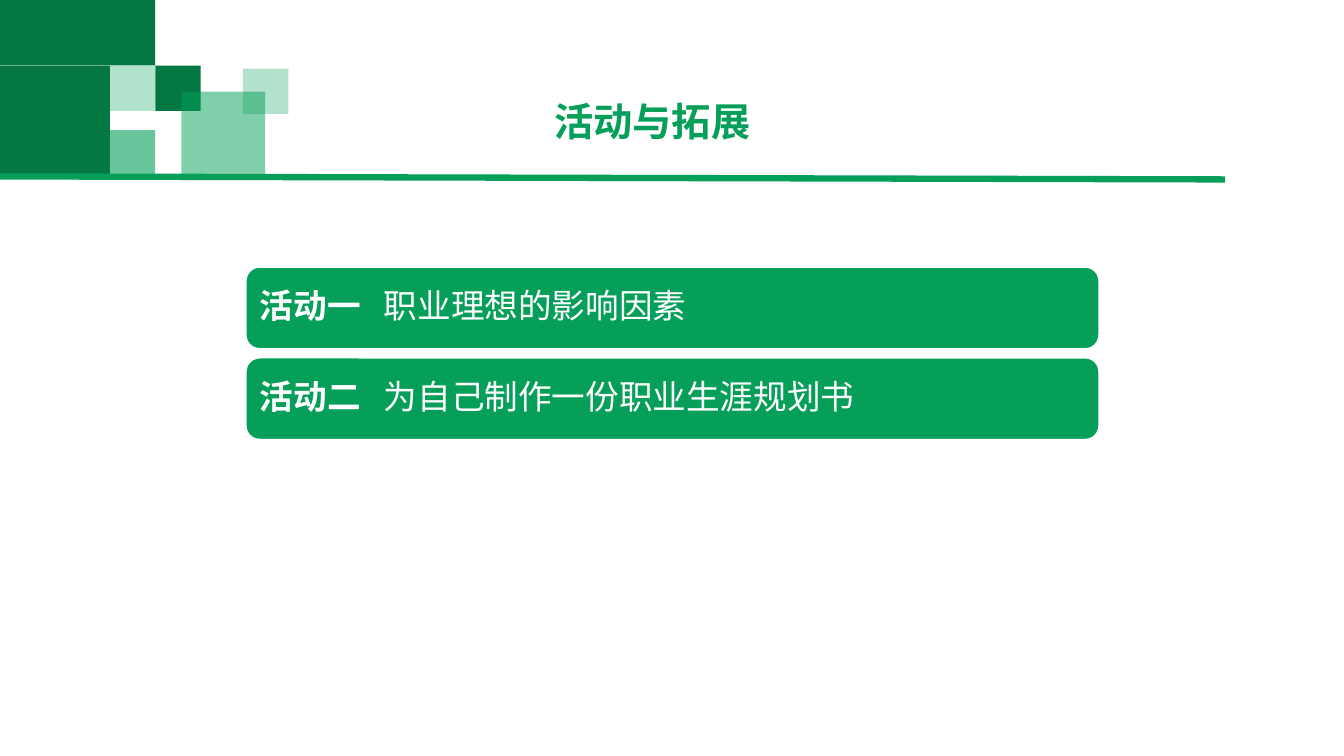
from dataclasses import dataclass

import pptx
import pptx.util
import pptx.dml.color
import pptx.enum.shapes
import pptx.enum.text
import pptx.oxml
import pptx.oxml.ns
from lxml import etree

Inches = pptx.util.Inches
Pt = pptx.util.Pt
RGB = pptx.dml.color.RGBColor
SHAPE = pptx.enum.shapes.MSO_SHAPE
ALIGN = pptx.enum.text.PP_ALIGN
ANCHOR = pptx.enum.text.MSO_ANCHOR
qn = pptx.oxml.ns.qn


@dataclass(frozen=True)
class Theme:
    dark: RGB = RGB(0x04, 0x77, 0x43)
    green: RGB = RGB(0x05, 0x9F, 0x59)
    white: RGB = RGB(0xFF, 0xFF, 0xFF)
    font: str = "Calibri"
    title_size: Pt = Pt(28)
    bar_size: Pt = Pt(24)
    rule_width: Pt = Pt(4.5)


THEME = Theme()
TILE = 0.45

# left, top, width, height, colour, opacity in percent
BLOCKS = [
    (0, 0.65, 1.09, 1.09, THEME.dark, 100),
    (0, 0, 1.54, 0.65, THEME.dark, 100),
    (1.09, 0.65, TILE, TILE, THEME.green, 30),
    (1.54, 0.65, TILE, TILE, THEME.dark, 100),
    (1.09, 1.29, TILE, TILE, THEME.green, 60),
    (1.8, 0.91, 0.83, 0.83, THEME.green, 50),
    (2.41, 0.68, TILE, TILE, THEME.green, 30),
]

ACTIVITIES = [
    ("活动一", "职业理想的影响因素"),
    ("活动二", "为自己制作一份职业生涯规划书"),
]
BAR_TOP, BAR_PITCH = 2.65, 0.9


def add_filled(s, kind, left, top, width, height, color):
    sp = s.shapes.add_shape(kind, Inches(left), Inches(top), Inches(width), Inches(height))
    sp.shadow.inherit = False
    sp.fill.solid()
    sp.fill.fore_color.rgb = color
    return sp


def add_block(s, left, top, width, height, color, opacity):
    sp = add_filled(s, SHAPE.RECTANGLE, left, top, width, height, color)
    sp.line.fill.background()
    if opacity < 100:
        clr = sp._element.spPr.find(qn("a:solidFill"))[0]
        etree.SubElement(clr, qn("a:alpha")).set("val", str(opacity * 1000))


def set_font(p, size, color):
    p.font.name = THEME.font
    p.font.size = size
    p.font.color.rgb = color


def add_title(s, text):
    box = s.shapes.add_textbox(Inches(3.38), Inches(0.97), Inches(6.18), Inches(1.09))
    tf = box.text_frame
    tf.word_wrap = True
    p = tf.paragraphs[0]
    p.text = text
    p.alignment = ALIGN.CENTER
    p.line_spacing = 0.9
    p.space_before = Pt(10)
    set_font(p, THEME.title_size, THEME.green)
    p.font.bold = True


def add_rule(s):
    line = s.shapes.add_connector(pptx.enum.shapes.MSO_CONNECTOR.STRAIGHT,
                                  Inches(0), Inches(1.75), Inches(12.15), Inches(1.78))
    line.line.color.rgb = THEME.green
    line.line.width = THEME.rule_width
    etree.SubElement(line._element.spPr, qn("a:effectLst"))


def add_tab_stop(p, position):
    tabs = etree.SubElement(p._p.get_or_add_pPr(), qn("a:tabLst"))
    etree.SubElement(tabs, qn("a:tab"), pos=str(int(position)), algn="l")


def add_activity(s, top, label, topic):
    """Draw a bar with a bold label and its topic aligned at a tab stop."""
    sp = add_filled(s, SHAPE.ROUNDED_RECTANGLE, 2.44, top, 8.46, 0.81, THEME.green)
    sp.line.color.rgb = THEME.white
    sp.line.width = Pt(1)
    tf = sp.text_frame
    tf.word_wrap = True
    tf.vertical_anchor = ANCHOR.MIDDLE
    tf.margin_left = tf.margin_right = tf.margin_top = tf.margin_bottom = Inches(0.1)
    p = tf.paragraphs[0]
    p.alignment = ALIGN.LEFT
    p.line_spacing = 0.9
    p.space_after = Pt(8.4)
    add_tab_stop(p, Inches(1.23))
    set_font(p, THEME.bar_size, THEME.white)
    for text, bold in ((label + "\t", True), (topic, False)):
        r = p.add_run()
        r.text = text
        r.font.bold = bold


def main():
    prs = pptx.Presentation()
    prs.slide_width, prs.slide_height = Inches(13.33), Inches(7.5)
    s = prs.slides.add_slide(prs.slide_layouts[6])
    for block in BLOCKS:
        add_block(s, *block)
    add_title(s, "活动与拓展")
    add_rule(s)
    for i, (label, topic) in enumerate(ACTIVITIES):
        add_activity(s, BAR_TOP + i * BAR_PITCH, label, topic)
    prs.save("out.pptx")


if __name__ == "__main__":
    main()
